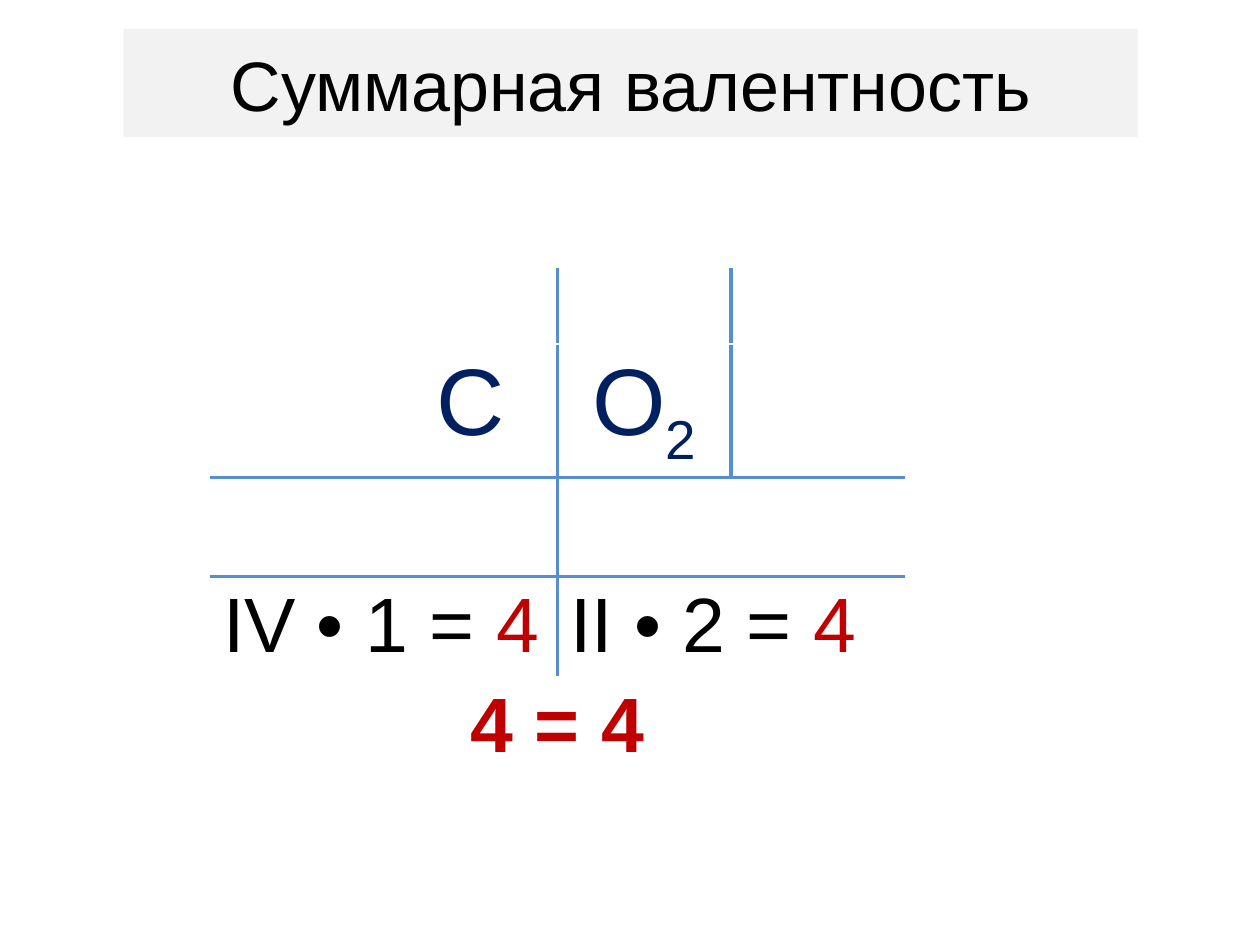
"""Build the slide on total valence in carbon dioxide."""
from lxml import etree
from pptx import Presentation
from pptx import util as u
from pptx.dml.color import RGBColor
from pptx.enum import shapes, text
from pptx.oxml import ns

NAVY, RED, BLACK, BLUE = "002060", "C00000", "000000", "558ED5"
MID = text.PP_ALIGN.CENTER


def rgb(code):
    return RGBColor.from_string(code)


def write(frame, words, size=44, color=BLACK, bold=False, align=None, base=0):
    para = frame.paragraphs[0]
    if align is not None:
        para.alignment = align
    run = para.add_run()
    run.text = words
    run.font.name = "Arial"
    run.font.size = u.Pt(size)
    run.font.bold = bold
    run.font.color.rgb = rgb(color)
    if base:
        run.font._element.set("baseline", str(base * 1000))


deck = Presentation()
deck.slide_width, deck.slide_height = u.Inches(10), u.Inches(7.5)
slide = deck.slides.add_slide(deck.slide_layouts[6])

title = slide.shapes.add_shape(
    shapes.MSO_SHAPE.RECTANGLE,
    u.Inches(0.98), u.Inches(0.23), u.Inches(8.05), u.Inches(0.86))
title.shadow.inherit = False
title.fill.solid()
title.fill.fore_color.rgb = rgb("F2F2F2")
title.line.fill.background()
title.text_frame.vertical_anchor = text.MSO_ANCHOR.MIDDLE
write(title.text_frame, "Суммарная валентность", size=40, align=MID)

highs = [0.6, 0.6, 1.05, 0.79, 0.79, 0.79]
grid = slide.shapes.add_table(
    len(highs), 4, u.Inches(1.67), u.Inches(1.53),
    u.Inches(5.51), u.Inches(sum(highs))).table
grid.first_row = grid.horz_banding = False
for row, high in zip(grid.rows, highs):
    row.height = u.Inches(high)

for r in range(len(highs)):
    for c in range(4):
        cell = grid.cell(r, c)
        sides = []
        if 1 <= r <= 4:
            if c == 2:
                sides.append("lnL")
            if c == 1 or (c == 0 and r >= 3):
                sides.append("lnR")
        if r == 3:
            sides.append("lnT")
        if r == 2:
            sides.append("lnB")
        props = cell._tc.get_or_add_tcPr()
        for side in sides:
            line = etree.SubElement(props, ns.qn("a:" + side), w=str(u.Pt(2.25)))
            fill = etree.SubElement(line, ns.qn("a:solidFill"))
            etree.SubElement(fill, ns.qn("a:srgbClr"), val=BLUE)
        cell.fill.background()

for r in (3, 4):
    for c in (0, 2):
        grid.cell(r, c).merge(grid.cell(r, c + 1))
grid.cell(5, 0).merge(grid.cell(5, 3))

left, right = grid.cell(2, 1).text_frame, grid.cell(2, 2).text_frame
write(left, "С", size=54, color=NAVY, align=MID)
write(right, "O", size=54, color=NAVY, align=MID)
write(right, "2", size=54, color=NAVY, align=MID, base=-25)

for c, words in ((0, "IV • 1 = "), (2, "II • 2 = ")):
    frame = grid.cell(4, c).text_frame
    write(frame, words)
    write(frame, "4", color=RED)

total = grid.cell(5, 0)
total.vertical_anchor = text.MSO_ANCHOR.MIDDLE
write(total.text_frame, "4 = 4", color=RED, bold=True, align=MID)

deck.save("out.pptx")
